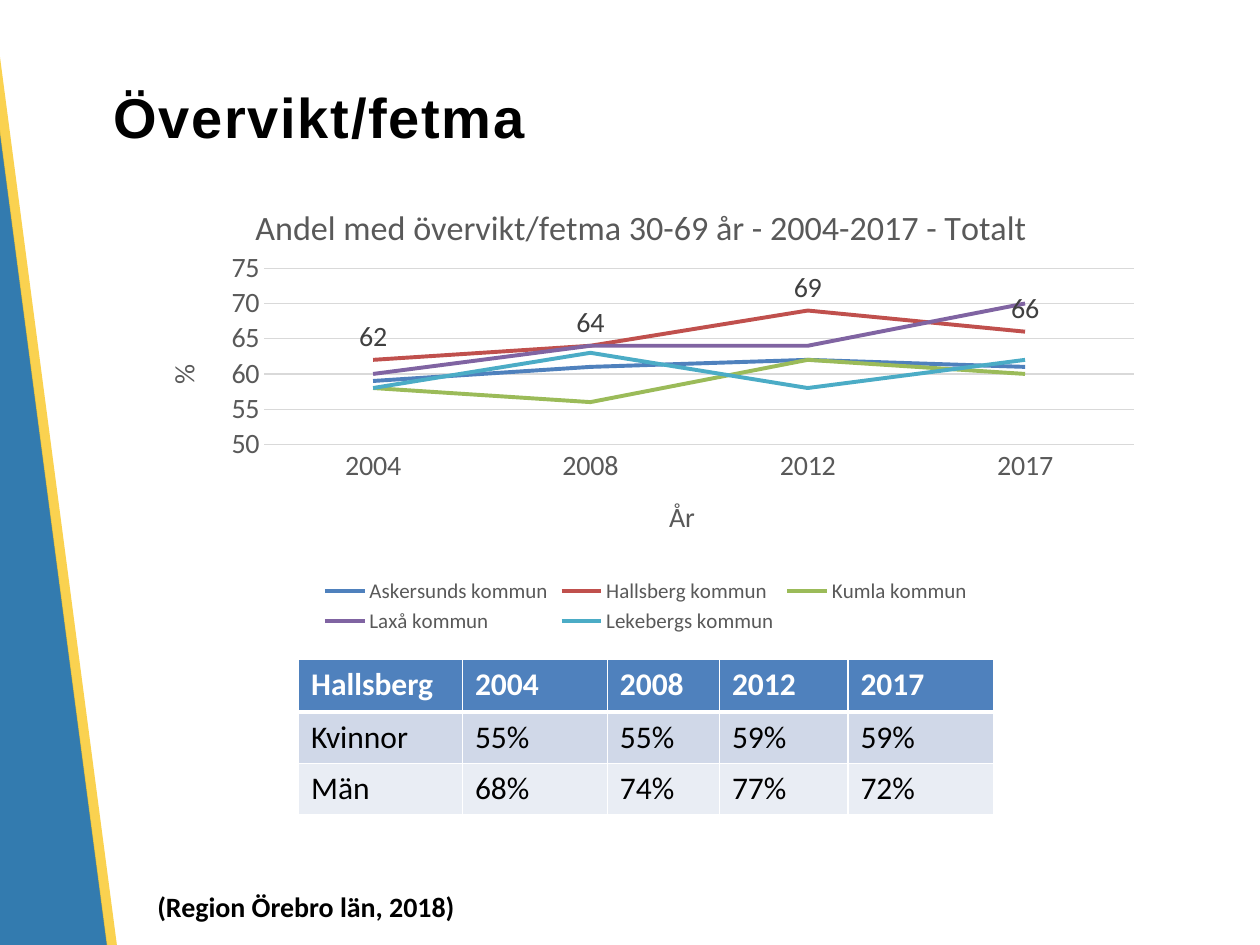
from lxml.etree import SubElement
from pptx import Presentation
from pptx.chart.data import CategoryChartData
from pptx.dml.color import RGBColor
from pptx.enum.chart import XL_CHART_TYPE, XL_LABEL_POSITION, XL_LEGEND_POSITION, XL_TICK_MARK
from pptx.enum.shapes import MSO_SHAPE
from pptx.enum.text import MSO_ANCHOR
from pptx.oxml.ns import qn
from pptx.util import Inches, Pt

COLORS = {
    "blue band": "005B9C", "yellow band": "FAC828",
    "black": "000000", "white": "FFFFFF",
    "chart text": "595959", "label": "404040", "grid": "D9D9D9",
    "header": "4F81BD", "dark row": "D0D8E8", "light row": "E9EDF4",
    "Askersunds kommun": "4F81BD", "Hallsberg kommun": "C0504D",
    "Kumla kommun": "9BBB59", "Laxå kommun": "8064A2",
    "Lekebergs kommun": "4BACC6",
}
YEARS = ["2004", "2008", "2012", "2017"]

presentation = Presentation()
presentation.slide_width, presentation.slide_height = Inches(10), Inches(7.5)
slide = presentation.slides.add_slide(presentation.slide_layouts[6])

# The slide is a grid of 100 columns by 75 rows
COLUMN = presentation.slide_width / 100
ROW = presentation.slide_height / 75


def style_font(font, size, color, bold=False, name="Calibri"):
    font.name, font.size, font.bold = name, Pt(size), bold
    font.color.rgb = RGBColor.from_string(COLORS[color])


def set_chart_layout(element, **percents):
    """Fix the place of a chart title or plot area, in percent of the chart."""
    for old_layout in element.findall(qn("c:layout")):
        element.remove(old_layout)
    layout = SubElement(element, qn("c:layout"))
    manual = SubElement(layout, qn("c:manualLayout"))
    if "w" in percents:
        SubElement(manual, qn("c:layoutTarget")).set("val", "inner")
    for side in "xy":
        SubElement(manual, qn(f"c:{side}Mode")).set("val", "edge")
    for key, percent in percents.items():
        SubElement(manual, qn(f"c:{key}")).set("val", str(percent / 100))
    text = element.find(qn("c:tx"))
    element.insert(0 if text is None else element.index(text) + 1, layout)


# Slanted bands along the left edge
for color, left, top, width, opacity in [
    ("blue band", -5.2, -16.4, 9.1, 80),
    ("yellow band", 3.73, -17.7, 0.8, 81),
]:
    band = slide.shapes.add_shape(
        MSO_SHAPE.RECTANGLE, int(left * COLUMN), int(top * ROW),
        int(width * COLUMN), int(113.2 * ROW))
    band.rotation = 352.5
    band.shadow.inherit = False
    band.line.fill.background()
    band.fill.solid()
    band.fill.fore_color.rgb = RGBColor.from_string(COLORS[color])
    fill_color = band.fill._xPr.find(qn("a:solidFill"))[0]
    SubElement(fill_color, qn("a:alpha")).set("val", str(opacity * 1000))

# Title and source
for text, left, top, width, height, size, font_name, spacing in [
    ("Övervikt/fetma", 8, 3, 86.5, 12.5, 32, "Arial", 100),
    ("(Region Örebro län, 2018)", 11.5, 70.1, 27.2, 3.7, 16, "Calibri", 0),
]:
    box = slide.shapes.add_textbox(
        int(left * COLUMN), int(top * ROW), int(width * COLUMN), int(height * ROW))
    frame = box.text_frame
    frame.word_wrap = True
    frame.vertical_anchor = MSO_ANCHOR.MIDDLE
    frame.text = text
    run = frame.paragraphs[0].runs[0]
    style_font(run.font, size, "black", True, font_name)
    run.font._element.set("spc", str(spacing))

# Line chart
chart_data = CategoryChartData(number_format="0")
chart_data.categories = YEARS
for name, values in [
    ("Askersunds kommun", (59, 61, 62, 61)),
    ("Hallsberg kommun", (62, 64, 69, 66)),
    ("Kumla kommun", (58, 56, 62, 60)),
    ("Laxå kommun", (60, 64, 64, 70)),
    ("Lekebergs kommun", (58, 63, 58, 62)),
]:
    chart_data.add_series(name, values)
chart = slide.shapes.add_chart(
    XL_CHART_TYPE.LINE, int(10.9 * COLUMN), int(14.4 * ROW),
    int(80.7 * COLUMN), int(36.3 * ROW), chart_data).chart
style_font(chart.font, 16, "chart text")
chart.plots[0].vary_by_categories = False
set_chart_layout(chart.plots[0]._element.getparent(), x=12.5, y=19, w=85.5, h=38.5)

for series in chart.plots[0].series:
    series.smooth = False
    series.format.line.width = Pt(2.25)
    series.format.line.color.rgb = RGBColor.from_string(COLORS[series.name])
    if series.name == "Hallsberg kommun":
        labels = series.data_labels
        labels.show_value = True
        labels.number_format, labels.number_format_is_linked = "0", False
        labels.position = XL_LABEL_POSITION.ABOVE
        style_font(labels.font, 16, "label")

value_axis, category_axis = chart.value_axis, chart.category_axis
value_axis.minimum_scale, value_axis.maximum_scale = 50, 75
value_axis.major_unit = 5
value_axis.tick_labels.number_format = "0"
value_axis.tick_labels.number_format_is_linked = False
value_axis.format.line.fill.background()
for axis in (value_axis, category_axis):
    axis.major_tick_mark = axis.minor_tick_mark = XL_TICK_MARK.NONE
    style_font(axis.tick_labels.font, 16, "chart text")
    # Automatic rotation lets crowded labels be skipped
    label_body = axis._element.find(qn("c:txPr")).find(qn("a:bodyPr"))
    label_body.set("rot", "-60000000")
    label_body.set("vert", "horz")
for line in (value_axis.major_gridlines.format.line, category_axis.format.line):
    line.width = Pt(0.75)
    line.color.rgb = RGBColor.from_string(COLORS["grid"])

for title, text, size, x, y in [
    (chart.chart_title, "Andel med övervikt/fetma 30-69 år - 2004-2017 - Totalt", 19.5, 11, 3.5),
    (category_axis.axis_title, "År", 16, 51.8, 68),
    (value_axis.axis_title, "%", 16, 2.2, 39),
]:
    title.text_frame.text = text
    style_font(title.text_frame.paragraphs[0].runs[0].font, size, "chart text")
    set_chart_layout(title._element, x=x, y=y)
value_title_body = value_axis.axis_title._element.find(".//" + qn("a:bodyPr"))
value_title_body.set("rot", "-5400000")
value_title_body.set("vert", "horz")

chart.has_legend = True
chart.legend.position = XL_LEGEND_POSITION.BOTTOM
chart.legend.include_in_layout = False
style_font(chart.legend.font, 12, "chart text")

# Table of shares by sex
table_rows = [
    ("header", ["Hallsberg", *YEARS]),
    ("dark row", ["Kvinnor", "55%", "55%", "59%", "59%"]),
    ("light row", ["Män", "68%", "74%", "77%", "72%"]),
]
table = slide.shapes.add_table(
    3, 5, int(23.7 * COLUMN), int(52.3 * ROW), int(55.2 * COLUMN), int(12.3 * ROW)).table
for column, width in zip(table.columns, (13, 11.5, 8.9, 10.2, 11.6)):
    column.width = int(width * COLUMN)
for row, height in zip(table.rows, (4.2, 4.1, 4.1)):
    row.height = int(height * ROW)
for row_index, (row_color, texts) in enumerate(table_rows):
    is_header = row_index == 0
    for column_index, text in enumerate(texts):
        cell = table.cell(row_index, column_index)
        cell.text = text
        style_font(cell.text_frame.paragraphs[0].runs[0].font, 18,
                   "white" if is_header else "black", is_header)
        properties = cell._tc.get_or_add_tcPr()
        for side in "LRTB":
            thick = (row_index, side) in [(0, "B"), (1, "T")]
            border = SubElement(properties, qn(f"a:ln{side}"), w=str(Pt(3 if thick else 1)))
            border_fill = SubElement(border, qn("a:solidFill"))
            SubElement(border_fill, qn("a:srgbClr")).set("val", COLORS["white"])
        cell.fill.solid()
        cell.fill.fore_color.rgb = RGBColor.from_string(COLORS[row_color])

presentation.save("out.pptx")
